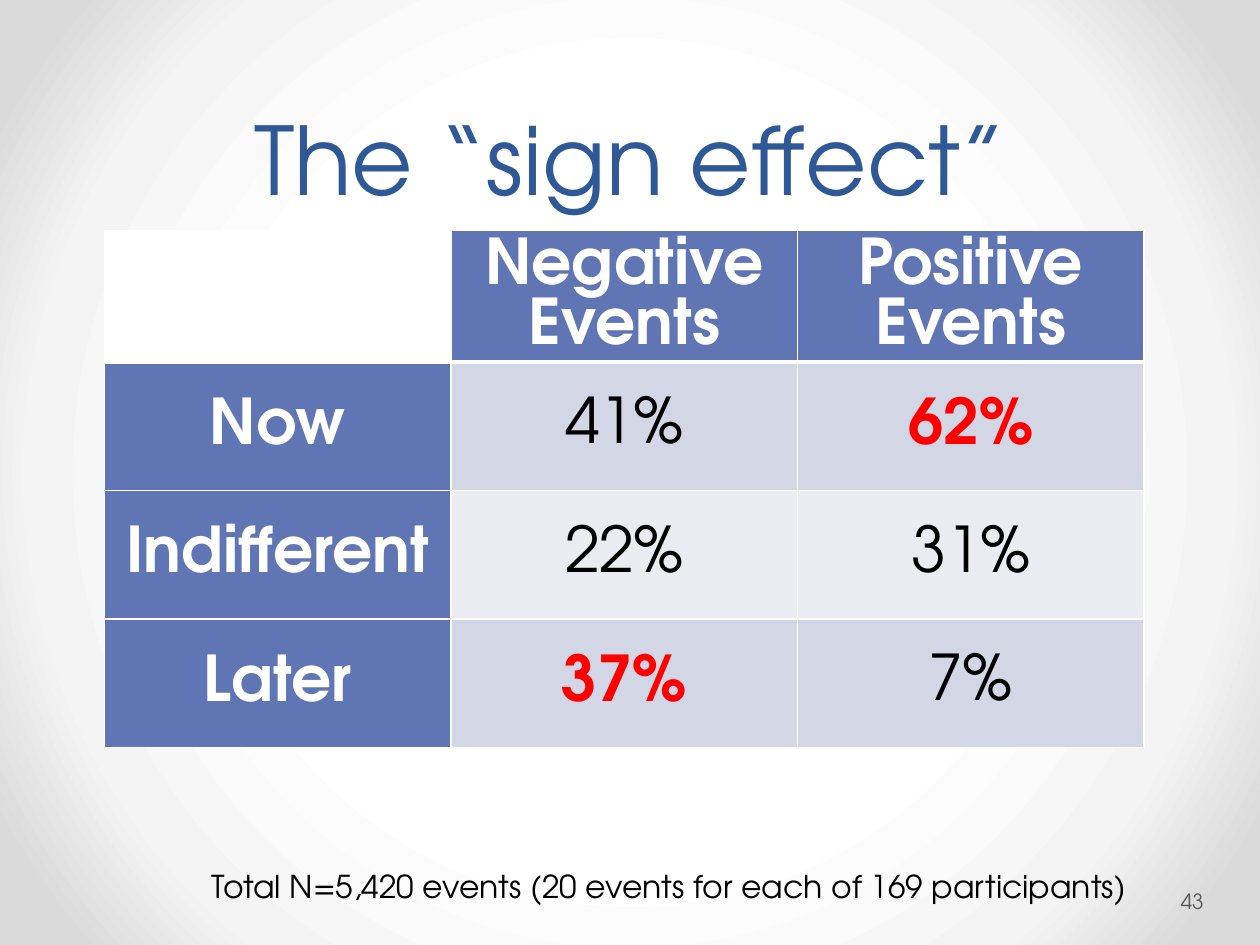
from dataclasses import dataclass

from lxml.etree import SubElement
from pptx import Presentation
from pptx.dml.color import RGBColor as Rgb
from pptx.enum.text import MSO_ANCHOR as Anchor, MSO_AUTO_SIZE as AutoSize, PP_ALIGN as Align
from pptx.oxml import parse_xml
from pptx.oxml.ns import nsdecls, qn
from pptx.util import Emu, Pt

EMU_PER_PX = 9144  # 100 px to the inch


@dataclass(frozen=True)
class Theme:
    font: str = "TeX Gyre Adventor"
    title: str = "2F5897"
    header: str = "6076B4"
    bands: tuple = ("D2D6E5", "EAECF2")
    white: str = "FFFFFF"
    ink: str = "000000"
    highlight: str = "FF0000"
    muted: str = "595959"
    backdrop: tuple = ((50, "FFFFFF"), (76, "F4F4F4"), (92, "DADADA"))
    title_pt: int = 54
    table_pt: int = 36
    note_pt: int = 18
    number_pt: int = 12
    border_pt: int = 1
    rule_pt: int = 3


THEME = Theme()

SHARES = [
    ["", "Negative Events", "Positive Events"],
    ["Now", "41%", "62%"],
    ["Indifferent", "22%", "31%"],
    ["Later", "37%", "7%"],
]
HIGHLIGHTED = {"62%", "37%"}


def px(length):
    return Emu(length * EMU_PER_PX)


def apply(target, formats):
    for name, value in formats.items():
        setattr(target, name, value)


def place(shape, box):
    apply(shape, dict(zip(("left", "top", "width", "height"), map(px, box))))


def write(frame, wording, size, color, bold=False, **paragraph_formats):
    paragraph = frame.paragraphs[0]
    apply(paragraph, paragraph_formats)
    run = paragraph.add_run()
    run.text = wording
    apply(run.font, {"name": THEME.font, "size": Pt(size), "bold": bold})
    run.font.color.rgb = Rgb.from_string(color)


def paint_backdrop(slide):
    """Radial gradient, light in the middle."""
    stops = "".join(
        f'<a:gs pos="{at * 1000}"><a:srgbClr val="{color}"/></a:gs>'
        for at, color in THEME.backdrop
    )
    background = parse_xml(
        f'<p:bg {nsdecls("p", "a")}><p:bgPr><a:gradFill><a:gsLst>{stops}</a:gsLst>'
        '<a:path path="circle"><a:fillToRect l="50000" t="50000" r="50000" b="50000"/></a:path>'
        "</a:gradFill><a:effectLst/></p:bgPr></p:bg>"
    )
    slide.element.cSld.insert(0, background)


def add_title(slide, box, wording):
    title = slide.shapes.title
    place(title, box)
    apply(title.text_frame, {
        "vertical_anchor": Anchor.BOTTOM, "word_wrap": True, "auto_size": AutoSize.NONE,
    })
    write(title.text_frame, wording, THEME.title_pt, THEME.title,
          alignment=Align.CENTER, line_spacing=Pt(58))


def set_borders(cell, widths):
    properties = cell._tc.get_or_add_tcPr()
    for index, (side, width) in enumerate(widths.items()):
        line = SubElement(properties, qn(f"a:ln{side}"), w=str(Pt(width)))
        fill = SubElement(line, qn("a:solidFill"))
        SubElement(fill, qn("a:srgbClr"), val=THEME.white)
        properties.insert(index, line)


def cell_colors(row, column, wording):
    """Fill and text colour for a place in the table."""
    if row == 0 and column == 0:
        return THEME.white, THEME.white
    if row == 0 or column == 0:
        return THEME.header, THEME.white
    band = THEME.bands[(row - 1) % 2]
    return band, THEME.highlight if wording in HIGHLIGHTED else THEME.ink


def add_share_table(slide, box, shares):
    shape = slide.shapes.add_table(len(shares), len(shares[0]), *map(px, box))
    table = shape.table
    for row, line in enumerate(shares):
        for column, wording in enumerate(line):
            cell = table.cell(row, column)
            fill, color = cell_colors(row, column, wording)
            cell.fill.solid()
            cell.fill.fore_color.rgb = Rgb.from_string(fill)
            cell.vertical_anchor = Anchor.MIDDLE
            # Heavy rule between the header and the first row
            set_borders(cell, {
                "L": THEME.border_pt,
                "R": THEME.border_pt,
                "T": THEME.rule_pt if row == 1 else THEME.border_pt,
                "B": THEME.rule_pt if row == 0 else THEME.border_pt,
            })
            if wording:
                write(cell.text_frame, wording, THEME.table_pt, color,
                      bold=color != THEME.ink, alignment=Align.CENTER, line_spacing=Pt(34))


def add_label(slide, box, wording, size, color, **frame_formats):
    label = slide.shapes.add_textbox(*map(px, box))
    apply(label.text_frame, frame_formats)
    write(label.text_frame, wording, size, color)


def build_slide(deck):
    slide = deck.slides.add_slide(deck.slide_layouts[5])
    paint_backdrop(slide)
    add_title(slide, (50, 0, 900, 175), "The “sign effect”")
    # Slide number
    add_label(slide, (934, 695, 61, 40), "43", THEME.number_pt, THEME.muted,
              word_wrap=True, vertical_anchor=Anchor.MIDDLE, margin_left=px(3), margin_right=px(5))
    add_share_table(slide, (83, 183, 825, 408), SHARES)
    # Sample size note
    add_label(slide, (158, 683, 748, 40),
              "Total N=5,420 events (20 events for each of 169 participants)",
              THEME.note_pt, THEME.ink, word_wrap=False, auto_size=AutoSize.SHAPE_TO_FIT_TEXT)


def main():
    deck = Presentation()
    apply(deck, {"slide_width": px(1000), "slide_height": px(750)})
    build_slide(deck)
    deck.save("out.pptx")


if __name__ == "__main__":
    main()
